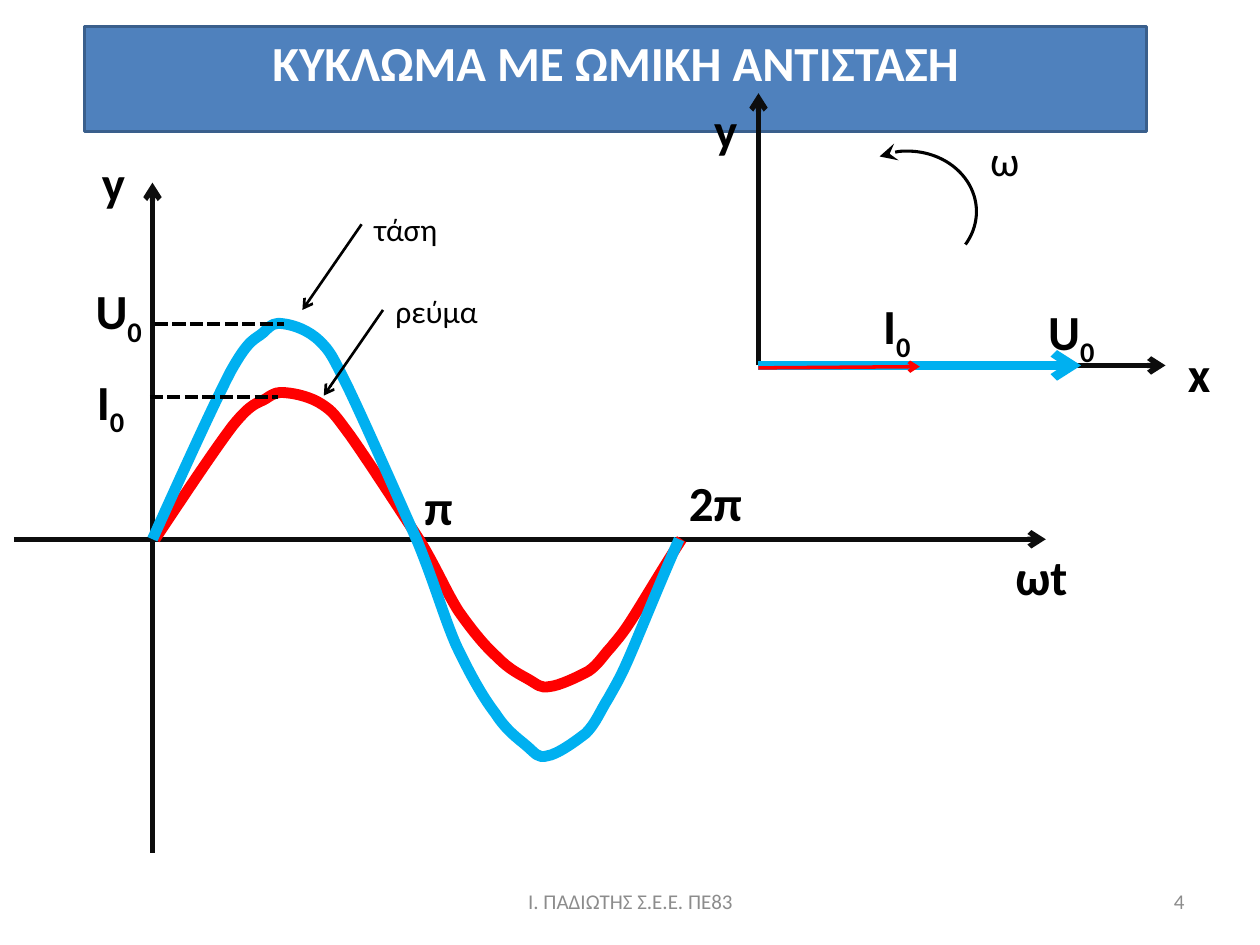
from lxml.etree import SubElement
from pptx import Presentation
from pptx.dml.color import RGBColor
from pptx.enum.dml import MSO_LINE
from pptx.enum.shapes import MSO_CONNECTOR, MSO_SHAPE
from pptx.enum.text import MSO_ANCHOR, MSO_AUTO_SIZE, PP_ALIGN
from pptx.oxml.ns import qn
from pptx.util import Inches, Pt

SLIDE_W, SLIDE_H = Inches(10), Inches(7.5)
COLUMNS, ROWS = 10, 7.5

BLACK = RGBColor(0, 0, 0)
WHITE = RGBColor(255, 255, 255)
AXIS = RGBColor(0x0D, 0x0D, 0x0D)
VOLTAGE = RGBColor(0x00, 0xB0, 0xF0)
CURRENT = RGBColor(0xFF, 0x00, 0x00)
BANNER = RGBColor(0x4F, 0x81, 0xBD)
BANNER_EDGE = RGBColor(0x3A, 0x5F, 0x8C)
FOOTER = RGBColor(0x8C, 0x8C, 0x8C)

FONT = "Calibri"
TIME_AXIS_Y = 4.28
PHASOR_ORIGIN = (6.02, 2.9)
CURRENT_SHARE = 0.68  # current amplitude relative to voltage amplitude

# Bezier control points of the voltage: distance from the origin, height over the axis
WAVE = [
    (0, 0),
    (0.24, 0.53), (0.48, 1.06), (0.62, 1.33),
    (0.77, 1.60), (0.81, 1.58), (0.88, 1.64),
    (0.95, 1.71), (0.97, 1.72), (1.04, 1.71),
    (1.12, 1.70), (1.24, 1.66), (1.33, 1.57),
    (1.41, 1.49), (1.42, 1.47), (1.55, 1.21),
    (1.68, 0.94), (1.95, 0.33), (2.10, -0.01),
    (2.24, -0.35), (2.31, -0.61), (2.41, -0.84),
    (2.52, -1.07), (2.62, -1.25), (2.72, -1.38),
    (2.81, -1.52), (2.90, -1.58), (2.97, -1.64),
    (3.04, -1.70), (3.06, -1.74), (3.13, -1.72),
    (3.21, -1.71), (3.35, -1.61), (3.44, -1.54),
    (3.52, -1.46), (3.55, -1.37), (3.62, -1.26),
    (3.68, -1.15), (3.71, -1.11), (3.80, -0.90),
    (3.89, -0.69), (4.03, -0.34), (4.18, 0),
]


def col(n):
    return round(SLIDE_W * n / COLUMNS)


def row(n):
    return round(SLIDE_H * n / ROWS)


def box(left, top, width, height):
    return col(left), row(top), col(width), row(height)


def style_line(line, color, width):
    line.color.rgb = color
    line.width = Pt(width)


def add_arrowhead(line, end, kind, size="med"):
    SubElement(line._get_or_add_ln(), qn(f"a:{end}"), type=kind, w=size, len=size)


def add_line(slide, start, end, color, width, arrow=True):
    segment = slide.shapes.add_connector(
        MSO_CONNECTOR.STRAIGHT, col(start[0]), row(start[1]), col(end[0]), row(end[1]))
    style_line(segment.line, color, width)
    if arrow:
        add_arrowhead(segment.line, "tailEnd", "arrow")
    SubElement(segment._element.spPr, qn("a:effectLst"))
    return segment


def add_amplitude_mark(slide, left, y):
    mark = add_line(slide, (left, y), (left + 1.02, y), BLACK, 2.5, arrow=False)
    mark.line.dash_style = MSO_LINE.SQUARE_DOT


def style_paragraph(paragraph, size, color, bold=False):
    font = paragraph.font
    font.name, font.size, font.bold = FONT, Pt(size), bold
    font.color.rgb = color


def add_label(slide, place, text, size=28, bold=True, subscript="", wrap=True):
    frame = slide.shapes.add_textbox(*box(*place)).text_frame
    frame.word_wrap = wrap
    frame.auto_size = MSO_AUTO_SIZE.SHAPE_TO_FIT_TEXT
    paragraph = frame.paragraphs[0]
    paragraph.add_run().text = text
    if subscript:
        index = paragraph.add_run()
        index.text = subscript
        index.font._element.set("baseline", "-25000")
    style_paragraph(paragraph, size, BLACK, bold)


def add_footer(slide, place, text, align):
    frame = slide.shapes.add_textbox(*box(*place)).text_frame
    frame.word_wrap = True
    frame.vertical_anchor = MSO_ANCHOR.MIDDLE
    paragraph = frame.paragraphs[0]
    paragraph.text, paragraph.alignment = text, align
    style_paragraph(paragraph, 12, FOOTER)


def bend_segments(curve, points):
    """Turn the straight segments of a freeform into cubic Bezier curves."""
    segments = list(curve._element.iter(qn("a:lnTo")))
    for i, segment in enumerate(segments):
        bend = segment.makeelement(qn("a:cubicBezTo"))
        for x, y in points[3 * i + 1:3 * i + 4]:
            SubElement(bend, qn("a:pt"), x=str(x - curve.left), y=str(y - curve.top))
        segment.getparent().replace(segment, bend)


def add_wave(slide, left, scale, color):
    points = [(col(left + x), row(TIME_AXIS_Y - scale * h)) for x, h in WAVE]
    builder = slide.shapes.build_freeform(*points[0])
    builder.add_line_segments(points[3::3], close=False)
    wave = builder.convert_to_shape()
    bend_segments(wave, points)
    wave.fill.background()
    wave.shadow.inherit = False
    style_line(wave.line, color, 6.25)


def add_title(slide, text):
    title = slide.shapes.title
    title.left, title.top, title.width, title.height = box(0.67, 0.21, 8.43, 0.57)
    title.fill.solid()
    title.fill.fore_color.rgb = BANNER
    style_line(title.line, BANNER_EDGE, 2)
    frame = title.text_frame
    frame.text = text
    frame.auto_size = MSO_AUTO_SIZE.SHAPE_TO_FIT_TEXT
    frame.vertical_anchor = MSO_ANCHOR.TOP
    frame.paragraphs[0].alignment = PP_ALIGN.CENTER
    style_paragraph(frame.paragraphs[0], 28, WHITE, bold=True)


def add_rotation_arc(slide):
    arc = slide.shapes.add_shape(MSO_SHAPE.ARC, *box(6.66, 1.2, 1.09, 0.96))
    arc.adjustments[0], arc.adjustments[1] = 145.738, 17.814
    arc.fill.background()
    arc.shadow.inherit = False
    style_line(arc.line, BLACK, 1.75)
    add_arrowhead(arc.line, "headEnd", "stealth", "lg")


def add_waveforms(slide):
    add_line(slide, (1.21, 6.77), (1.21, 1.45), AXIS, 3)
    add_line(slide, (0.11, TIME_AXIS_Y), (8.3, TIME_AXIS_Y), AXIS, 3)
    add_wave(slide, 1.23, CURRENT_SHARE, CURRENT)
    add_wave(slide, 1.21, 1, VOLTAGE)
    add_amplitude_mark(slide, 1.23, 2.57)
    add_amplitude_mark(slide, 1.19, 3.15)
    for x, y in ((2.87, 1.78), (3.04, 2.46)):
        add_line(slide, (x, y), (x - 0.47, y + 0.68), BLACK, 1.5)
    add_label(slide, (0.71, 1.16, 0.45, 0.57), "y")
    add_label(slide, (7.96, 4.29, 0.62, 0.57), "ωt", wrap=False)
    add_label(slide, (0.66, 2.18, 0.71, 0.57), "U", subscript="0")
    add_label(slide, (0.67, 2.9, 0.71, 0.57), "I", subscript="0")
    add_label(slide, (3.27, 3.73, 0.87, 0.57), "π")
    add_label(slide, (5.37, 3.7, 0.87, 0.57), "2π")
    add_label(slide, (2.87, 1.62, 0.71, 0.4), "τάση", 18, bold=False)
    add_label(slide, (3.04, 2.27, 0.86, 0.4), "ρεύμα", 18, bold=False, wrap=False)


def add_phasors(slide):
    add_line(slide, PHASOR_ORIGIN, (6.02, 0.74), AXIS, 3)
    add_line(slide, PHASOR_ORIGIN, (9.25, 2.9), AXIS, 3)
    add_line(slide, PHASOR_ORIGIN, (8.58, 2.9), VOLTAGE, 5)
    add_line(slide, (6.02, 2.92), (7.3, 2.91), CURRENT, 2)
    add_rotation_arc(slide)
    add_label(slide, (5.57, 0.74, 0.45, 0.57), "y")
    add_label(slide, (9.33, 2.68, 0.39, 0.57), "x", wrap=False)
    add_label(slide, (8.22, 2.34, 0.71, 0.57), "U", subscript="0")
    add_label(slide, (6.91, 2.3, 0.71, 0.57), "I", subscript="0")
    add_label(slide, (7.76, 1.02, 0.71, 0.5), "ω", 24, bold=False)


def main():
    deck = Presentation()
    deck.slide_width, deck.slide_height = SLIDE_W, SLIDE_H
    slide = deck.slides.add_slide(deck.slide_layouts[5])
    add_title(slide, "ΚΥΚΛΩΜΑ ΜΕ ΩΜΙΚΗ ΑΝΤΙΣΤΑΣΗ")
    add_waveforms(slide)
    add_phasors(slide)
    add_footer(slide, (3.42, 6.95, 3.17, 0.4), "Ι. ΠΑΔΙΩΤΗΣ Σ.Ε.Ε. ΠΕ83", PP_ALIGN.CENTER)
    add_footer(slide, (7.17, 6.95, 2.33, 0.4), "4", PP_ALIGN.RIGHT)
    deck.save("out.pptx")


if __name__ == "__main__":
    main()
